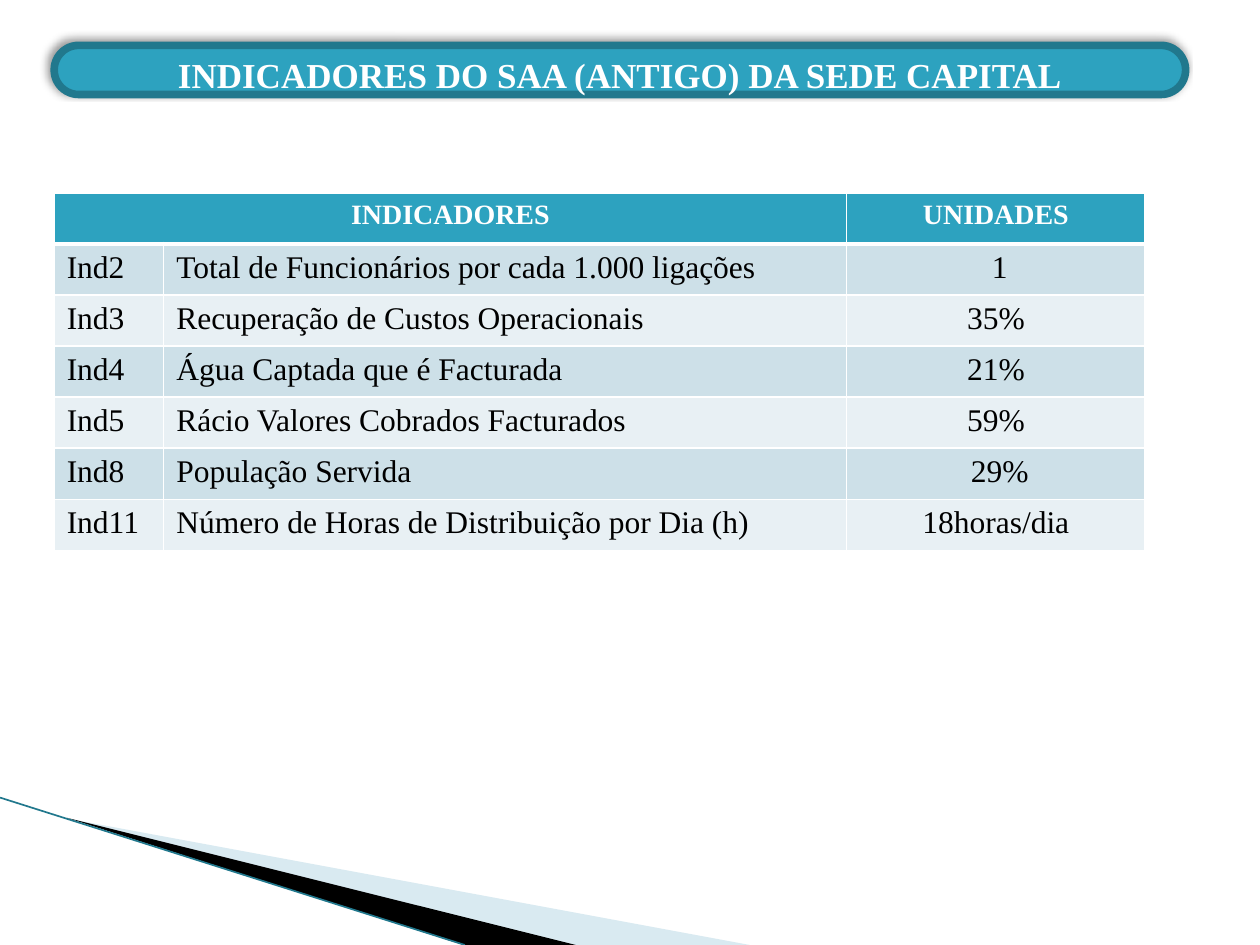
from lxml import etree
from pptx import Presentation
from pptx.dml.color import RGBColor
from pptx.enum import shapes as kinds, text
from pptx.oxml import ns
from pptx.util import Inches, Pt

FONT = "Times New Roman"
TEAL, DARK_TEAL, WHITE, BLACK = "2DA2BF", "21788D", "FFFFFF", "000000"
BANDS = ("CDE0E8", "E8F0F4")

HEADINGS = ("INDICADORES", "", "UNIDADES")
INDICATORS = (
    ("Ind2", "Total de Funcionários por cada 1.000 ligações", " 1"),
    ("Ind3", "Recuperação de Custos Operacionais", "35%"),
    ("Ind4", "Água Captada que é Facturada", "21%"),
    ("Ind5", "Rácio Valores Cobrados Facturados", "59%"),
    ("Ind8", "População Servida", " 29%"),
    ("Ind11", "Número de Horas de Distribuição por Dia (h)", "18horas/dia"),
)


def paint(colour_format, hex_colour):
    colour_format.rgb = RGBColor.from_string(hex_colour)


def fill(part, hex_colour):
    part.fill.solid()
    paint(part.fill.fore_color, hex_colour)


def add_xml(parent, tag, **attributes):
    return etree.SubElement(parent, ns.qn(tag), attributes)


def style(paragraph, size, hex_colour, bold, align):
    paragraph.alignment = align
    font = paragraph.font
    font.name, font.size, font.bold = FONT, Pt(size), bold
    paint(font.color, hex_colour)


def add_wedge(slide, left, top, points, hex_colour, opacity=100):
    corners = [(left + Inches(x), top + Inches(y)) for x, y in points]
    builder = slide.shapes.build_freeform(*corners[0], scale=1.0)
    builder.add_line_segments(corners[1:], close=True)
    wedge = builder.convert_to_shape()
    wedge.shadow.inherit = False
    fill(wedge, hex_colour)
    wedge.line.fill.background()
    if opacity < 100:
        colour = wedge._element.spPr.find(".//" + ns.qn("a:srgbClr"))
        add_xml(colour, "a:alpha", val=str(opacity * 1000))


def add_corner(slide, left, top):
    """Wedges and edge line in the lower left corner."""
    add_wedge(slide, left, top, [(0.55, 0.17), (5.95, 1.17), (4.56, 1.17)], "A0CBDC", 40)
    add_wedge(slide, left, top, [(0.53, 0.16), (4.57, 1.17), (3.68, 1.17)], BLACK)
    edge = slide.shapes.add_connector(
        kinds.MSO_CONNECTOR.STRAIGHT, left, top, left + Inches(3.69), top + Inches(1.17))
    paint(edge.line.color, DARK_TEAL)
    edge.line.width = Pt(0.95)
    add_xml(edge._element.spPr, "a:effectLst")


def add_title(slide, left, top, width, height):
    """Rounded bar with the title placeholder on top of it."""
    bar = slide.shapes.add_shape(
        kinds.MSO_SHAPE.ROUNDED_RECTANGLE, left, top, width, height)
    bar.adjustments[0] = 0.5
    fill(bar, TEAL)
    paint(bar.line.color, DARK_TEAL)
    bar.line.width = Pt(4.33)
    bar.shadow.inherit = False
    effects = bar._element.spPr.find(ns.qn("a:effectLst"))
    shadow = add_xml(effects, "a:outerShdw", blurRad=str(Pt(4)), dist=str(Pt(3)),
                     dir=str(225 * 60000), algn="br", rotWithShape="0")
    add_xml(add_xml(shadow, "a:srgbClr", val=BLACK), "a:alpha", val="40000")

    title = slide.shapes.title
    slide.shapes._spTree.append(title._element)
    title.left, title.top = left, top + Inches(0.04)
    title.width, title.height = width, height
    frame = title.text_frame
    frame.text = "INDICADORES DO SAA (ANTIGO) DA SEDE CAPITAL"
    frame.margin_top = frame.margin_bottom = 0
    frame.vertical_anchor = text.MSO_ANCHOR.MIDDLE
    frame.auto_size = text.MSO_AUTO_SIZE.NONE
    style(frame.paragraphs[0], 20, WHITE, True, text.PP_ALIGN.CENTER)


def add_borders(cell, top=1, bottom=1):
    properties = cell._tc.get_or_add_tcPr()
    for side, points in (("L", 1), ("R", 1), ("T", top), ("B", bottom)):
        line = add_xml(properties, f"a:ln{side}", w=str(Pt(points)))
        add_xml(add_xml(line, "a:solidFill"), "a:srgbClr", val=WHITE)


def add_indicators(slide, left, top, width, height):
    """Indicator table: a header row over banded rows."""
    rows = (HEADINGS, *INDICATORS)
    table = slide.shapes.add_table(
        len(rows), len(HEADINGS), left, top, width, height).table
    code_width, unit_width = Inches(0.87), Inches(2.37)
    widths = (code_width, width - code_width - unit_width, unit_width)
    for column, column_width in zip(table.columns, widths):
        column.width = column_width
    table.cell(0, 0).merge(table.cell(0, 1))

    for r, row in enumerate(rows):
        header = r == 0
        for c, wording in enumerate(row):
            cell = table.cell(r, c)
            add_borders(cell, top=3 if r == 1 else 1, bottom=3 if header else 1)
            fill(cell, TEAL if header else BANDS[(r - 1) % 2])
            if cell.is_spanned:
                continue
            cell.text = wording
            centred = header or c == 2
            style(cell.text_frame.paragraphs[0], 16 if header else 18,
                  WHITE if header else BLACK, header,
                  text.PP_ALIGN.CENTER if centred else text.PP_ALIGN.LEFT)


def main():
    deck = Presentation()
    deck.slide_width, deck.slide_height = Inches(10), Inches(7.5)
    slide = deck.slides.add_slide(deck.slide_layouts[5])
    add_corner(slide, Inches(0), Inches(6.33))
    add_title(slide, Inches(0.43), Inches(0.36), Inches(8.98), Inches(0.39))
    add_indicators(slide, Inches(0.43), Inches(1.53), Inches(8.66), Inches(2.84))
    deck.save("out.pptx")


if __name__ == "__main__":
    main()
